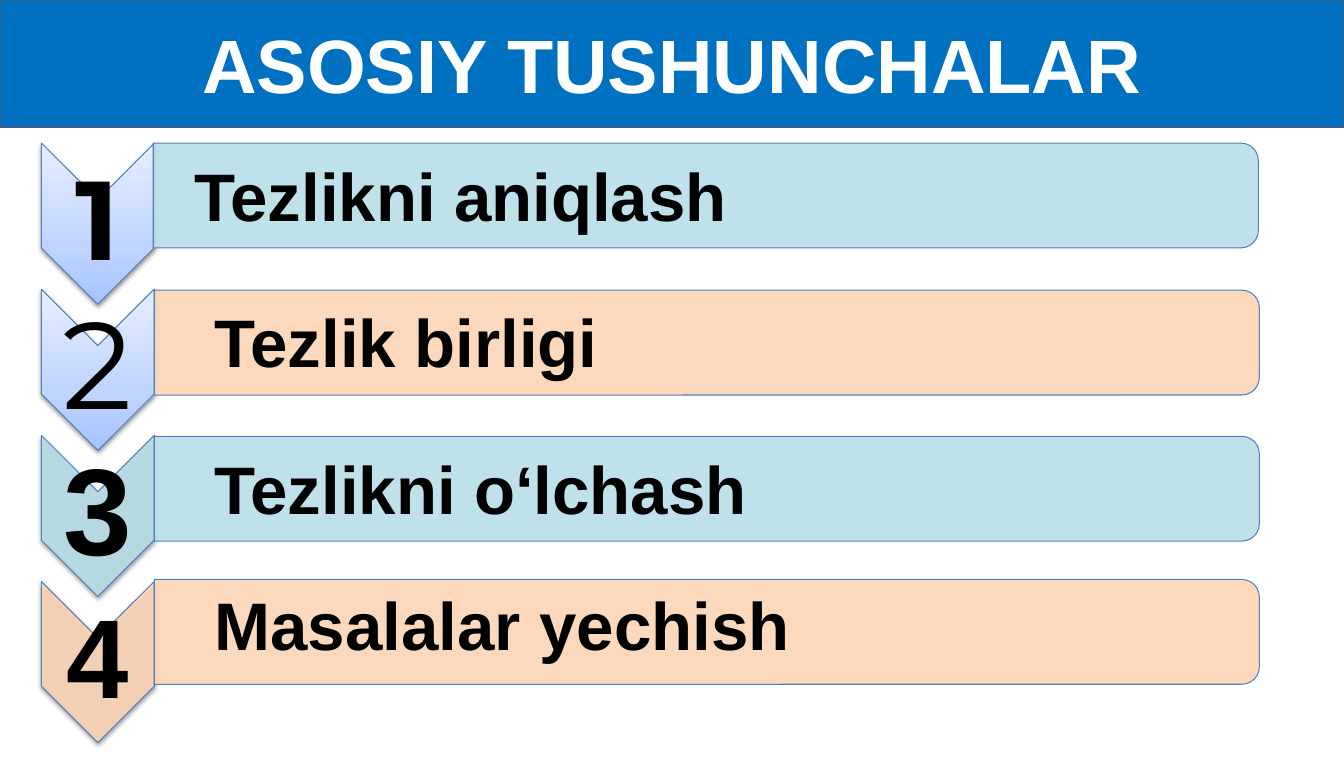
from dataclasses import dataclass

from lxml.etree import SubElement
from pptx import Presentation
from pptx.dml.color import RGBColor
from pptx.enum.shapes import MSO_SHAPE as Preset
from pptx.enum.text import MSO_ANCHOR as Anchor, MSO_AUTO_SIZE as AutoSize, PP_ALIGN as Align
from pptx.oxml import parse_xml
from pptx.oxml.ns import qn
from pptx.shapes.autoshape import Shape
from pptx.slide import Slide
from pptx.text.text import TextFrame
from pptx.util import Emu, Pt

PX = 9144  # 100 px to the inch
WHITE = RGBColor(0xFF, 0xFF, 0xFF)
BLACK = RGBColor(0x00, 0x00, 0x00)
BANNER_BLUE = RGBColor(0x00, 0x70, 0xC0)
BANNER_EDGE = RGBColor(0x3A, 0x5F, 0x8C)
EDGE_BLUE = RGBColor(0x4F, 0x81, 0xBD)
AQUA = RGBColor(0xB7, 0xDE, 0xE8)
PEACH = RGBColor(0xFC, 0xD5, 0xB5)
SKY_STOPS = (
    (0, RGBColor(0xA4, 0xC4, 0xFF)),
    (35, RGBColor(0xBF, 0xD4, 0xFF)),
    (100, RGBColor(0xE6, 0xEE, 0xFF)),
)
A_NS = 'xmlns:a="http://schemas.openxmlformats.org/drawingml/2006/main"'
ROW_PITCH = 145


@dataclass(frozen=True)
class Concept:
    number: str
    caption: str
    bar_color: RGBColor
    bar_left: int
    bar_top: int
    caption_left: int
    caption_top: int
    caption_width: int
    number_size: int = 88
    number_font: str = "Arial"
    number_bold: bool = True
    sky_chevron: bool = False


CONCEPTS = (
    Concept("1", "Tezlikni aniqlash", AQUA, 152, 142, 183, 148, 842,
            number_size=80, number_font="Montserrat", sky_chevron=True),
    Concept("2", "Tezlik birligi", PEACH, 153, 288, 203, 293, 1047,
            number_font="Montserrat", number_bold=False, sky_chevron=True),
    Concept("3", "Tezlikni o‘lchash", AQUA, 153, 433, 203, 439, 964),
    Concept("4", "Masalalar yechish", PEACH, 153, 575, 203, 574, 964, number_size=80),
)


def px(*lengths: int) -> list[Emu]:
    return [Emu(length * PX) for length in lengths]


def write(frame: TextFrame, text: str, size: int, color: RGBColor = BLACK,
          font: str = "Arial", bold: bool = True) -> None:
    run = frame.paragraphs[0].add_run()
    run.text = text
    run.font.name = font
    run.font.size = Pt(size)
    run.font.bold = bold
    run.font.color.rgb = color


def add_turned_shape(slide: Slide, preset: Preset, left: int, top: int,
                     width: int, height: int) -> Shape:
    """Add a shape turned by 90 degrees; the box given is the one seen after turning."""
    shift = (width - height) // 2
    shape = slide.shapes.add_shape(preset, *px(left + shift, top - shift, height, width))
    shape.rotation = 90
    shape.shadow.inherit = False
    shape.line.color.rgb = EDGE_BLUE
    shape.line.width = Pt(0.75)
    return shape


def fill_translucent(shape: Shape, color: RGBColor) -> None:
    shape.fill.solid()
    shape.fill.fore_color.rgb = color
    srgb = shape.fill._xPr.find(qn("a:solidFill")).find(qn("a:srgbClr"))
    SubElement(srgb, qn("a:alpha"), val="90000")


def fill_sky(shape: Shape) -> None:
    """Fill with a three-stop gradient that stays upright when the shape is turned."""
    stops = "".join(f'<a:gs pos="{pos * 1000}"><a:srgbClr val="{color}"/></a:gs>'
                    for pos, color in SKY_STOPS)
    gradient = parse_xml(f'<a:gradFill {A_NS} rotWithShape="0"><a:gsLst>{stops}</a:gsLst>'
                         '<a:lin ang="16200000" scaled="0"/></a:gradFill>')
    shape._element.spPr.find(qn("a:prstGeom")).addnext(gradient)


def add_soft_shadow(shape: Shape) -> None:
    effects = shape._element.spPr.find(qn("a:effectLst"))
    effects.append(parse_xml(
        f'<a:outerShdw {A_NS} blurRad="40000" dist="20000" dir="5400000" rotWithShape="0">'
        '<a:srgbClr val="000000"><a:alpha val="38000"/></a:srgbClr></a:outerShdw>'))


def add_number(slide: Slide, concept: Concept, top: int) -> None:
    frame = slide.shapes.add_textbox(*px(41, top, 112, 48)).text_frame
    frame.word_wrap = True
    frame.vertical_anchor = Anchor.MIDDLE
    frame.margin_left = frame.margin_right = frame.margin_top = frame.margin_bottom = Emu(6 * PX)
    frame.paragraphs[0].alignment = Align.CENTER
    frame.paragraphs[0].line_spacing = 0.9
    write(frame, concept.number, concept.number_size,
          font=concept.number_font, bold=concept.number_bold)


def add_marker_and_bar(slide: Slide, concept: Concept, top: int) -> None:
    chevron = add_turned_shape(slide, Preset.CHEVRON, 41, top, 112, 160)
    if concept.sky_chevron:
        fill_sky(chevron)
    else:
        fill_translucent(chevron, concept.bar_color)
    add_soft_shadow(chevron)
    add_number(slide, concept, top + 56)
    bar = add_turned_shape(slide, Preset.ROUND_2_SAME_RECTANGLE,
                           concept.bar_left, concept.bar_top, 1096, 104)
    fill_translucent(bar, concept.bar_color)


def add_caption(slide: Slide, concept: Concept) -> None:
    box = px(concept.caption_left, concept.caption_top, concept.caption_width, 91)
    frame = slide.shapes.add_textbox(*box).text_frame
    frame.word_wrap = True
    frame.auto_size = AutoSize.SHAPE_TO_FIT_TEXT
    write(frame, concept.caption, 48)


def format_banner(banner: Shape) -> None:
    banner.left, banner.top, banner.width, banner.height = px(0, 0, 1333, 126)
    banner.fill.solid()
    banner.fill.fore_color.rgb = BANNER_BLUE
    banner.line.color.rgb = BANNER_EDGE
    banner.line.width = Pt(2)
    frame = banner.text_frame
    frame.auto_size = AutoSize.NONE
    frame.vertical_anchor = Anchor.MIDDLE
    frame.paragraphs[0].alignment = Align.CENTER
    write(frame, "ASOSIY TUSHUNCHALAR", 54, WHITE)


def main() -> None:
    deck = Presentation()
    deck.slide_width, deck.slide_height = px(1333, 768)
    slide = deck.slides.add_slide(deck.slide_layouts[5])
    format_banner(slide.shapes.title)
    for row, concept in enumerate(CONCEPTS):
        add_marker_and_bar(slide, concept, 142 + row * ROW_PITCH)
    for concept in CONCEPTS:
        add_caption(slide, concept)
    deck.save("out.pptx")


if __name__ == "__main__":
    main()
